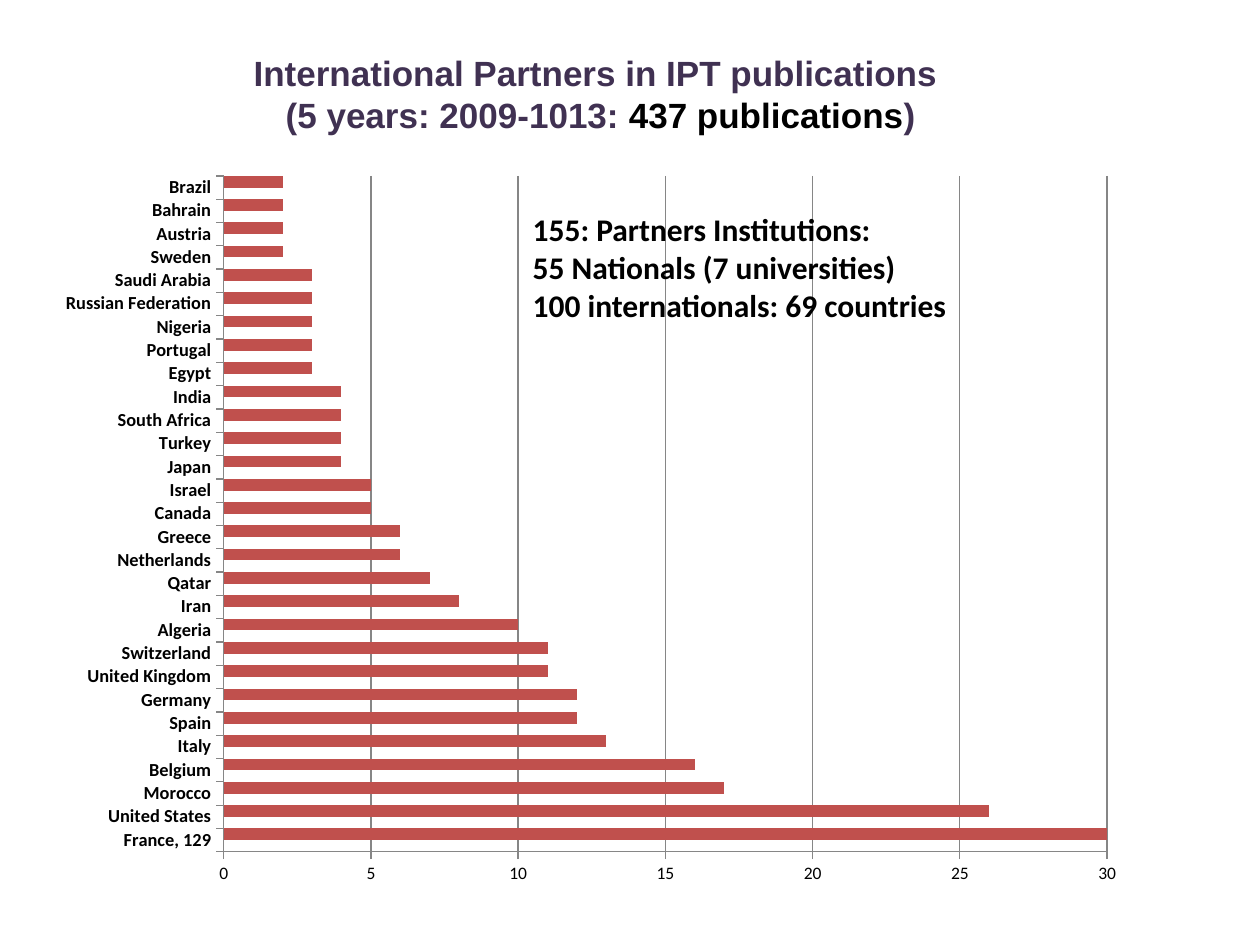
from dataclasses import dataclass

import pptx
import pptx.chart.data
import pptx.dml.color
import pptx.enum.chart
import pptx.enum.text
import pptx.util
from lxml import etree
from pptx.util import Cm, Pt

RGB = pptx.dml.color.RGBColor.from_string


@dataclass(frozen=True)
class Theme:
    heading_font: str = "Arial"
    body_font: str = "Calibri"
    title_size: float = 20
    note_size: float = 18
    country_size: float = 10.5
    scale_size: float = 10
    black: str = "000000"
    purple: str = "403152"
    blue: str = "4F81BD"
    red: str = "C0504D"
    grey: str = "868686"


@dataclass(frozen=True)
class Area:
    left: float
    top: float
    width: float
    height: float

    def lengths(self) -> tuple:
        return Cm(self.left), Cm(self.top), Cm(self.width), Cm(self.height)


@dataclass(frozen=True)
class Span:
    text: str
    color: str


@dataclass(frozen=True)
class Partner:
    country: str
    publications: int


THEME = Theme()
TITLE_AREA = Area(3.1, 0.91, 18.01, 1.96)
CHART_AREA = Area(0.89, 3.25, 22.07, 14.86)
NOTE_AREA = Area(10.49, 4.11, 10.01, 3.33)
PLOT_FRACTIONS = {"x": 0.164, "y": 0.02, "w": 0.807, "h": 0.917}

TITLE_LINES = [
    [Span("International Partners in IPT publications ", THEME.purple)],
    [
        Span("(5 years: 2009-1013: ", THEME.purple),
        Span("437 publications", THEME.black),
        Span(")", THEME.purple),
    ],
]
NOTE_LINES = [
    [Span(text, THEME.black)]
    for text in (
        "155: Partners Institutions:",
        "55 Nationals (7 universities)",
        "100 internationals: 69 countries",
    )
]
PARTNERS = [
    Partner("France, 129", 129),
    Partner("United States", 26),
    Partner("Morocco", 17),
    Partner("Belgium", 16),
    Partner("Italy", 13),
    Partner("Spain", 12),
    Partner("Germany", 12),
    Partner("United Kingdom", 11),
    Partner("Switzerland", 11),
    Partner("Algeria", 10),
    Partner("Iran", 8),
    Partner("Qatar", 7),
    Partner("Netherlands", 6),
    Partner("Greece", 6),
    Partner("Canada", 5),
    Partner("Israel", 5),
    Partner("Japan", 4),
    Partner("Turkey", 4),
    Partner("South Africa", 4),
    Partner("India", 4),
    Partner("Egypt", 3),
    Partner("Portugal", 3),
    Partner("Nigeria", 3),
    Partner("Russian Federation", 3),
    Partner("Saudi Arabia", 3),
    Partner("Sweden", 2),
    Partner("Austria", 2),
    Partner("Bahrain", 2),
    Partner("Brazil", 2),
]


def style_font(font, name: str, size: float, color: str, bold: bool) -> None:
    font.name = name
    font.size = Pt(size)
    font.bold = bold
    font.color.rgb = RGB(color)


def write_lines(box, lines: list[list[Span]], font: str, size: float, alignment) -> None:
    frame = box.text_frame
    frame.word_wrap = True
    frame.auto_size = pptx.enum.text.MSO_AUTO_SIZE.NONE
    frame.vertical_anchor = pptx.enum.text.MSO_ANCHOR.TOP
    for index, line in enumerate(lines):
        para = frame.paragraphs[0] if index == 0 else frame.add_paragraph()
        para.alignment = alignment
        para.space_before = Pt(0)
        for span in line:
            run = para.add_run()
            run.text = span.text
            style_font(run.font, font, size, span.color, True)


def fix_plot_area(chart) -> None:
    """Pin the inner plot area to fixed fractions of the chart frame."""
    plot_area = chart.plots[0]._element.getparent()
    namespace = etree.QName(plot_area).namespace
    for old in plot_area.findall(f"{{{namespace}}}layout"):
        plot_area.remove(old)
    layout = etree.Element(f"{{{namespace}}}layout")
    manual = etree.SubElement(layout, f"{{{namespace}}}manualLayout")
    settings = {"layoutTarget": "inner", "xMode": "edge", "yMode": "edge", **PLOT_FRACTIONS}
    for tag, value in settings.items():
        etree.SubElement(manual, f"{{{namespace}}}{tag}").set("val", str(value))
    plot_area.insert(0, layout)


def style_axis(axis, size: float, bold: bool) -> None:
    axis.major_tick_mark = pptx.enum.chart.XL_TICK_MARK.OUTSIDE
    axis.minor_tick_mark = pptx.enum.chart.XL_TICK_MARK.NONE
    axis.format.line.color.rgb = RGB(THEME.grey)
    style_font(axis.tick_labels.font, THEME.body_font, size, THEME.black, bold)


def add_partner_chart(page) -> None:
    data = pptx.chart.data.CategoryChartData()
    data.categories = [partner.country for partner in PARTNERS]
    data.add_series("Series 1", [None] * len(PARTNERS))
    data.add_series("Series 2", [partner.publications for partner in PARTNERS])
    chart = page.shapes.add_chart(
        pptx.enum.chart.XL_CHART_TYPE.BAR_CLUSTERED, *CHART_AREA.lengths(), data
    ).chart
    chart.has_title = False
    chart.has_legend = False
    style_font(chart.font, THEME.body_font, THEME.scale_size, THEME.black, False)

    plot = chart.plots[0]
    plot.gap_width = 0
    plot.overlap = 0
    plot.vary_by_categories = False
    for series, color in zip(plot.series, (THEME.blue, THEME.red)):
        series.format.fill.solid()
        series.format.fill.fore_color.rgb = RGB(color)
        series.invert_if_negative = False

    style_axis(chart.category_axis, THEME.country_size, True)
    scale = chart.value_axis
    style_axis(scale, THEME.scale_size, False)
    scale.minimum_scale, scale.maximum_scale, scale.major_unit = 0, 30, 5
    scale.has_major_gridlines = True
    scale.major_gridlines.format.line.color.rgb = RGB(THEME.grey)
    fix_plot_area(chart)


def main() -> None:
    deck = pptx.Presentation()
    deck.slide_width, deck.slide_height = Cm(25.4), Cm(19.05)
    page = deck.slides.add_slide(deck.slide_layouts.get_by_name("Title Only"))

    add_partner_chart(page)
    title = page.shapes.title
    title.left, title.top, title.width, title.height = TITLE_AREA.lengths()
    align = pptx.enum.text.PP_ALIGN
    write_lines(title, TITLE_LINES, THEME.heading_font, THEME.title_size, align.CENTER)
    note = page.shapes.add_textbox(*NOTE_AREA.lengths())
    write_lines(note, NOTE_LINES, THEME.body_font, THEME.note_size, align.LEFT)

    deck.save("out.pptx")


if __name__ == "__main__":
    main()
